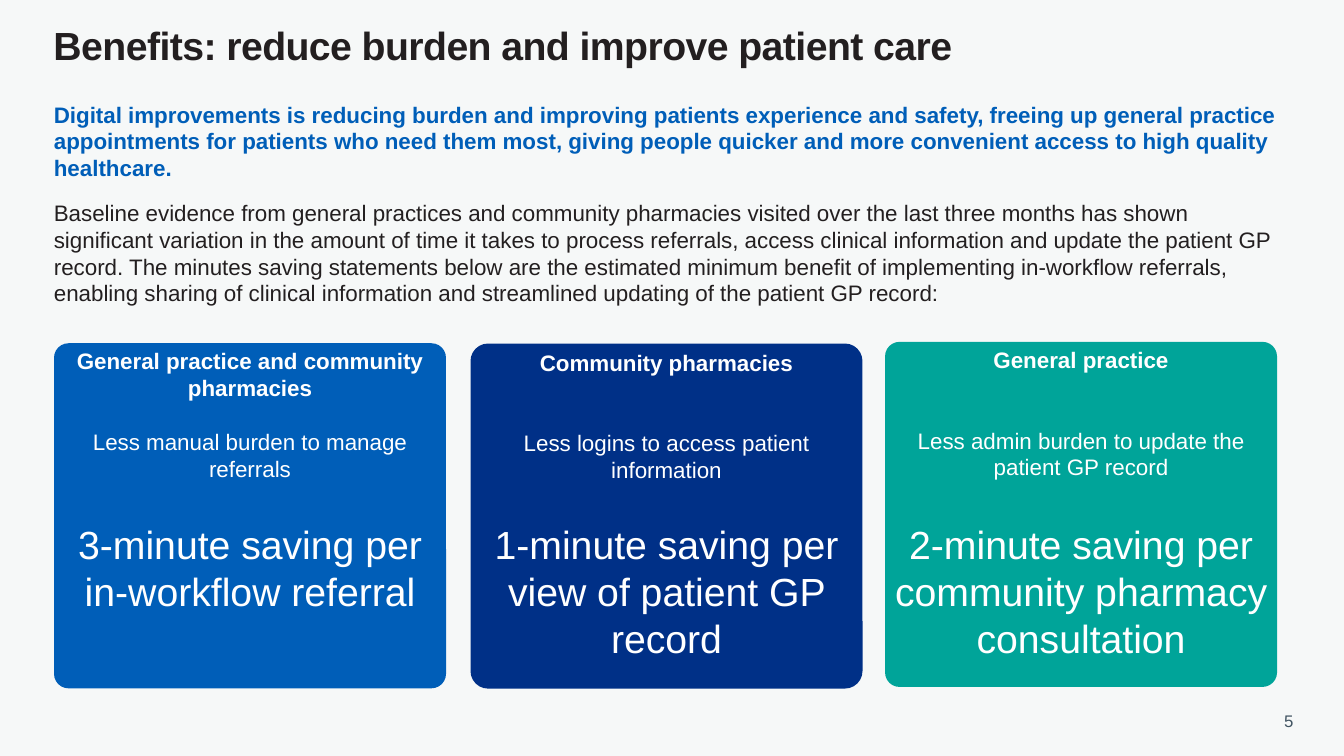
from dataclasses import dataclass

from pptx import Presentation
from pptx.dml.color import RGBColor
from pptx.enum.shapes import MSO_SHAPE as Shape
from pptx.enum.text import MSO_ANCHOR as Anchor, PP_ALIGN as Align
from pptx.util import Pt


@dataclass(frozen=True)
class Theme:
    font: str = "Arial"
    background: str = "F6F8F8"
    ink: str = "231F20"
    grey: str = "425563"
    white: str = "FFFFFF"
    blue: str = "005EB8"
    navy: str = "003087"
    teal: str = "00A499"
    large: float = 28
    body: float = 16
    small: float = 12


THEME = Theme()


def add_text(frame, text, size=THEME.body, color=THEME.ink, bold=False,
             align=Align.LEFT, before=0, line_spacing=None, tracking=None):
    """Write one paragraph, using the frame's empty first one if there is one."""
    first = frame.paragraphs[0]
    paragraph = frame.add_paragraph() if first.runs else first
    paragraph.alignment = align
    if before:
        paragraph.space_before = Pt(before)
    if line_spacing:
        paragraph.line_spacing = line_spacing
    run = paragraph.add_run()
    run.text = text
    font = run.font
    font.name, font.size, font.bold = THEME.font, Pt(size), bold
    font.color.rgb = RGBColor.from_string(color)
    if tracking:
        run._r.get_or_add_rPr().set("spc", str(round(tracking * 100)))


class SlideBuilder:
    def __init__(self, presentation, theme):
        self.theme = theme
        self.slide = presentation.slides.add_slide(presentation.slide_layouts[6])
        fill = self.slide.background.fill
        fill.solid()
        fill.fore_color.rgb = RGBColor.from_string(theme.background)

    def set_frame(self, frame, anchor=Anchor.TOP, inset=True):
        frame.word_wrap = True
        frame.vertical_anchor = anchor
        frame.margin_left = frame.margin_right = Pt(7.2 if inset else 0)
        frame.margin_top = frame.margin_bottom = Pt(3.6 if inset else 0)
        return frame

    def text_box(self, left, top, width, height, **frame_format):
        box = self.slide.shapes.add_textbox(Pt(left), Pt(top), Pt(width), Pt(height))
        return self.set_frame(box.text_frame, **frame_format)

    def card(self, left, top, width, height, color, radius):
        shape = self.slide.shapes.add_shape(
            Shape.ROUNDED_RECTANGLE, Pt(left), Pt(top), Pt(width), Pt(height))
        shape.adjustments[0] = radius
        shape.shadow.inherit = False
        shape.fill.solid()
        shape.fill.fore_color.rgb = RGBColor.from_string(color)
        shape.line.fill.background()
        return self.set_frame(shape.text_frame, inset=False)

    def benefit(self, left, top, color, radius, heading, gap, reason, saving,
                saving_width=280):
        """A card with its heading and reason, and the saving centred over it."""
        width, height = 280, 246.5
        white_centred = dict(color=self.theme.white, align=Align.CENTER)
        frame = self.card(left, top, width, height, color, radius)
        add_text(frame, heading, bold=True, **white_centred)
        add_text(frame, reason, before=gap, **white_centred)
        saving_left = left + (width - saving_width) / 2
        frame = self.text_box(saving_left, 367.9, saving_width, 120)
        add_text(frame, saving, size=self.theme.large, **white_centred)


def main():
    presentation = Presentation()
    presentation.slide_width, presentation.slide_height = Pt(960), Pt(540)
    builder = SlideBuilder(presentation, THEME)

    # Title
    frame = builder.text_box(38.2, 0, 898, 68.4, anchor=Anchor.MIDDLE, inset=False)
    add_text(frame, "Benefits: reduce burden and improve patient care",
             size=THEME.large, bold=True, line_spacing=0.9, tracking=-0.4)

    # Introduction
    frame = builder.text_box(31.4, 68.4, 897, 155.5)
    add_text(frame, "Digital improvements is reducing burden and improving patients "
             "experience and safety, freeing up general practice appointments for "
             "patients who need them most, giving people quicker and more convenient "
             "access to high quality healthcare.", color=THEME.blue, bold=True)
    add_text(frame, "Baseline evidence from general practices and community pharmacies "
             "visited over the last three months has shown significant variation in "
             "the amount of time it takes to process referrals, access clinical "
             "information and update the patient GP record. The minutes saving "
             "statements below are the estimated minimum benefit of implementing "
             "in-workflow referrals, enabling sharing of clinical information and "
             "streamlined updating of the patient GP record:", before=12.6)

    # Benefit cards; the gap lines up the reasons under one- and two-line headings
    line = 1.2 * THEME.body
    builder.benefit(38.6, 245.2, THEME.blue, 0.042,
                    "General practice and community pharmacies", line,
                    "Less manual burden to manage referrals",
                    "3-minute saving per in-workflow referral")
    builder.benefit(336.1, 245.4, THEME.navy, 0.051,
                    "Community pharmacies", 2 * line,
                    "Less logins to access patient information",
                    "1-minute saving per view of patient GP record")
    builder.benefit(632.2, 244.2, THEME.teal, 0.042,
                    "General practice", 2 * line,
                    "Less admin burden to update the patient GP record",
                    "2-minute saving per community pharmacy consultation",
                    saving_width=297.4)

    # Page number
    frame = builder.text_box(901.4, 504, 29.5, 21.6)
    add_text(frame, "5", size=THEME.small, color=THEME.grey, align=Align.RIGHT)

    presentation.save("out.pptx")


if __name__ == "__main__":
    main()
